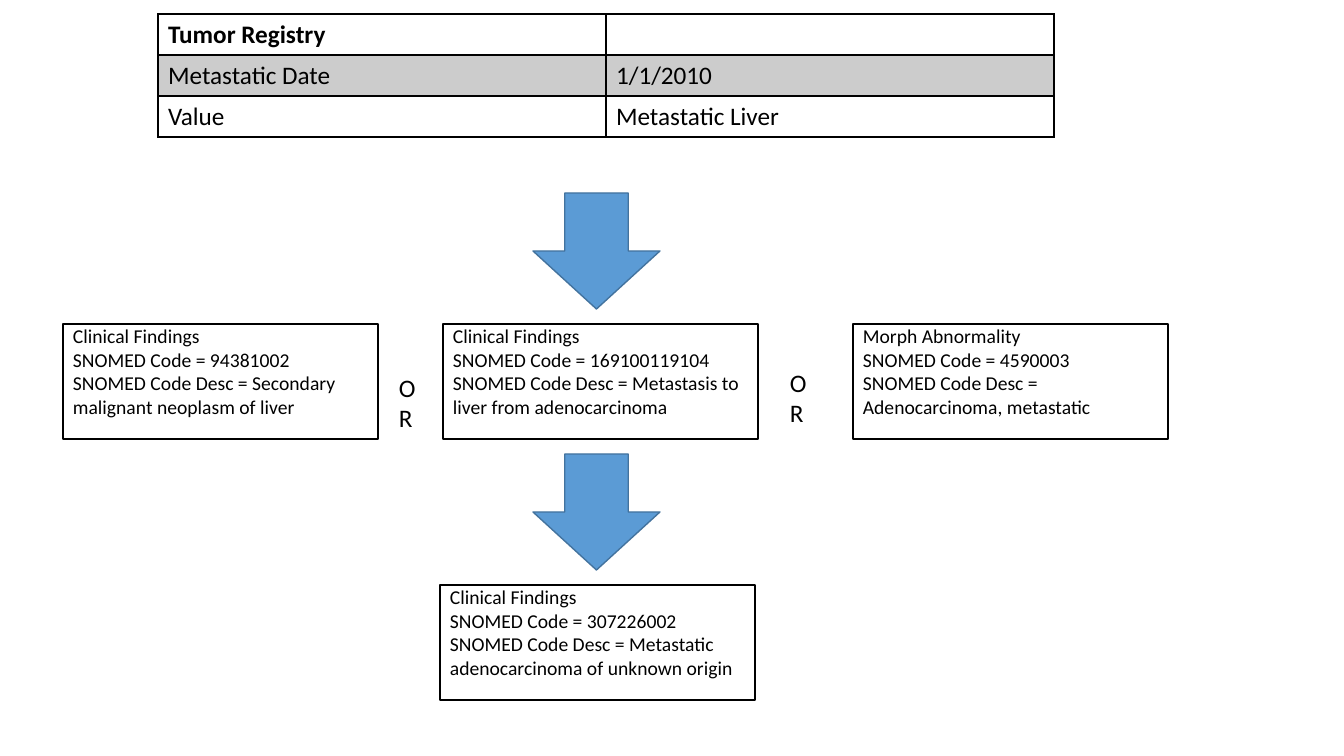
from lxml import etree
from pptx import Presentation
from pptx import util as u
from pptx.dml.color import RGBColor
from pptx.enum import shapes, text
from pptx.oxml.ns import qn

PX = 914400 / 100.8


def px(*lengths):
    return [u.Emu(round(n * PX)) for n in lengths]


def rgb(value):
    return RGBColor.from_string(value)


class Diagram:
    font, ink, paper = "Calibri", "000000", "FFFFFF"
    arrow_fill, arrow_line = "5B9BD5", "43739E"

    def __init__(self, prs):
        self.s = prs.slides.add_slide(prs.slide_layouts[6])

    def put_text(self, tf, lines, size, bold=False):
        for i, line in enumerate(lines):
            p = tf.paragraphs[0] if i == 0 else tf.add_paragraph()
            p.alignment = text.PP_ALIGN.LEFT
            r = p.add_run()
            r.text = line
            for name, value in {"name": self.font, "size": u.Pt(size), "bold": bold}.items():
                setattr(r.font, name, value)
            r.font.color.rgb = rgb(self.ink)

    def shape(self, kind, at, fill, line, width):
        sp = self.s.shapes.add_shape(kind, *px(*at))
        sp.shadow.inherit = False
        sp.fill.solid()
        sp.fill.fore_color.rgb = rgb(fill)
        sp.line.color.rgb = rgb(line)
        sp.line.width = u.Pt(width)
        return sp

    def arrow(self, x, y):
        self.shape(shapes.MSO_SHAPE.DOWN_ARROW, (x, y, 127, 116),
                   self.arrow_fill, self.arrow_line, 1)

    def box(self, x, y, lines):
        sp = self.shape(shapes.MSO_SHAPE.RECTANGLE, (x, y, 315, 115), self.paper, self.ink, 2)
        tf = sp.text_frame
        frame = {"word_wrap": True, "vertical_anchor": text.MSO_ANCHOR.TOP,
                 "margin_top": 0, "margin_bottom": 0}
        for name, value in frame.items():
            setattr(tf, name, value)
        self.put_text(tf, lines, 14)

    def label(self, x, y, word):
        tf = self.s.shapes.add_textbox(*px(x, y, 50, 40)).text_frame
        tf.word_wrap = False
        self.put_text(tf, [word], 18)

    def border(self, cell, side, width):
        ln = etree.SubElement(cell._tc.get_or_add_tcPr(), qn(f"a:ln{side}"), w=str(u.Pt(width)))
        fill = etree.SubElement(ln, qn("a:solidFill"))
        etree.SubElement(fill, qn("a:srgbClr"), val=self.ink)

    def table(self, x, y, col_width, row_height, rows, shaded_row):
        n, m = len(rows), len(rows[0])
        tbl = self.s.shapes.add_table(
            n, m, *px(x, y, col_width * m, row_height * n)).table
        tbl.first_row = tbl.horz_banding = False
        for i, row in enumerate(rows):
            for j, value in enumerate(row):
                cell = tbl.cell(i, j)
                # Borders come before the fill in the cell properties
                for side in "LRTB":
                    heavy = (i, side) in ((0, "B"), (1, "T"))
                    self.border(cell, side, 2 if heavy else 1)
                if i == shaded_row:
                    cell.fill.solid()
                    cell.fill.fore_color.rgb = rgb(self.ink)
                    clr = cell._tc.tcPr.find(qn("a:solidFill")).find(qn("a:srgbClr"))
                    etree.SubElement(clr, qn("a:alpha"), val="20000")
                else:
                    cell.fill.background()
                if value:
                    self.put_text(cell.text_frame, [value], 18, bold=i == 0)


def main():
    prs = Presentation()
    prs.slide_width, prs.slide_height = px(1344, 756)
    d = Diagram(prs)

    # Registry record
    d.table(158, 14, 448, 41, [
        ("Tumor Registry", ""),
        ("Metastatic Date", "1/1/2010"),
        ("Value", "Metastatic Liver"),
    ], shaded_row=1)

    # Steps down the page
    for y in (193, 454):
        d.arrow(533, y)

    # Candidate codes and the resulting code
    for x, y, kind, code, desc in (
        (63, 324, "Clinical Findings", "94381002", "Secondary malignant neoplasm of liver"),
        (443, 324, "Clinical Findings", "169100119104", "Metastasis to liver from adenocarcinoma"),
        (853, 324, "Morph Abnormality", "4590003", "Adenocarcinoma, metastatic"),
        (440, 585, "Clinical Findings", "307226002", "Metastatic adenocarcinoma of unknown origin"),
    ):
        d.box(x, y, [kind, f"SNOMED Code = {code}", f"SNOMED Code Desc = {desc}"])

    # Alternatives
    for x, y in ((389, 367), (780, 362)):
        d.label(x, y, "OR")

    prs.save("out.pptx")


if __name__ == "__main__":
    main()
